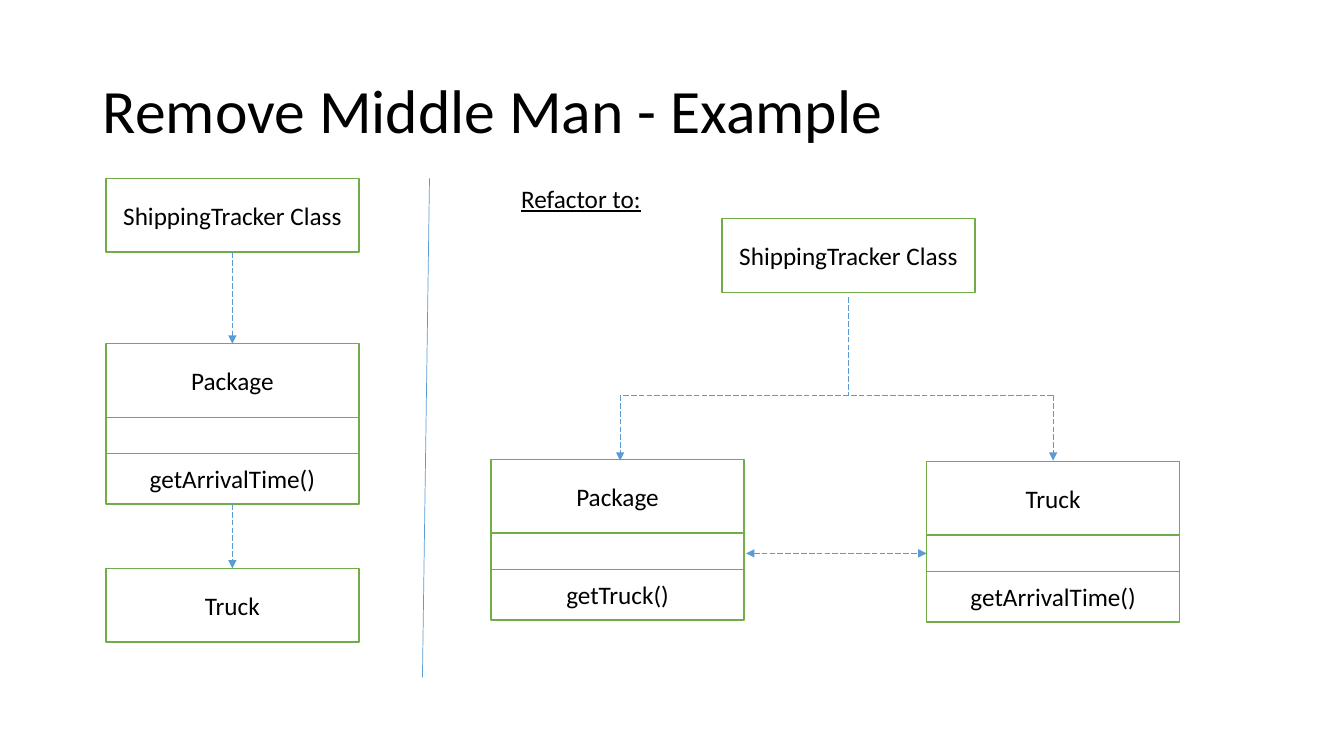
from lxml import etree
from pptx import Presentation
from pptx.dml.color import RGBColor
from pptx.enum.dml import MSO_LINE
from pptx.enum.shapes import MSO_CONNECTOR, MSO_SHAPE
from pptx.enum.text import MSO_ANCHOR, MSO_AUTO_SIZE, PP_ALIGN
from pptx.oxml.ns import qn
from pptx.util import Inches, Pt

RECT = MSO_SHAPE.RECTANGLE
STRAIGHT = MSO_CONNECTOR.STRAIGHT
LONG_DASH = MSO_LINE.LONG_DASH
MIDDLE = MSO_ANCHOR.MIDDLE
LEFT, CENTER = PP_ALIGN.LEFT, PP_ALIGN.CENTER
NO_FIT, GROW = MSO_AUTO_SIZE.NONE, MSO_AUTO_SIZE.SHAPE_TO_FIT_TEXT

BLACK, WHITE, GREEN, BLUE = "000000", "FFFFFF", "70AD47", "5B9BD5"
BOX_W, NAME_H, FIELD_H, METHOD_H = 2.51, 0.73, 0.36, 0.5
CLASS_H = NAME_H + FIELD_H + METHOD_H
TOP = 1.77


def rgb(value):
    """Turn a hex string into a colour."""
    return RGBColor.from_string(value)


def write(tf, text, align=LEFT, **extra):
    """Write one formatted paragraph and return it."""
    p = tf.paragraphs[0]
    p.alignment = align
    r = p.add_run()
    r.text = text
    for name, value in {"name": "Calibri", "size": Pt(18), **extra}.items():
        setattr(r.font, name, value)
    r.font.color.rgb = rgb(BLACK)
    return p


def add_cell(sl, x, y, h, text=""):
    """Draw one outlined compartment of a class box."""
    sp = sl.shapes.add_shape(RECT, *map(Inches, (x, y, BOX_W, h)))
    sp.shadow.inherit = False
    sp.fill.solid()
    sp.fill.fore_color.rgb = rgb(WHITE)
    sp.line.color.rgb = rgb(GREEN)
    sp.line.width = Pt(1)
    sp.text_frame.vertical_anchor = MIDDLE
    sp.text_frame.word_wrap = True
    if text:
        write(sp.text_frame, text, CENTER)


def add_class(sl, x, y, name, method=None):
    """Draw a class box, with field and method compartments if it has a method."""
    add_cell(sl, x, y, NAME_H, name)
    if method:
        add_cell(sl, x, y + NAME_H, FIELD_H)
        add_cell(sl, x, y + NAME_H + FIELD_H, METHOD_H, method)


def add_line(sl, start, end, ends=(), dashed=True):
    """Draw a thin line with triangles at the named ends."""
    cn = sl.shapes.add_connector(STRAIGHT, *map(Inches, (*start, *end)))
    cn.line.color.rgb = rgb(BLUE)
    cn.line.width = Pt(0.5)
    if dashed:
        cn.line.dash_style = LONG_DASH
    ln = cn.line._get_or_add_ln()
    for end_tag in ends:
        etree.SubElement(ln, qn(f"a:{end_tag}"), type="triangle")
    etree.SubElement(cn._element.spPr, qn("a:effectLst"))


def add_title(sl, x, y, w, h, text):
    """Place and format the title placeholder."""
    sp = sl.shapes.title
    sp.left, sp.top, sp.width, sp.height = map(Inches, (x, y, w, h))
    tf = sp.text_frame
    for name, value in {"vertical_anchor": MIDDLE, "auto_size": NO_FIT, "word_wrap": True}.items():
        setattr(tf, name, value)
    write(tf, text, size=Pt(44)).line_spacing = 0.9


def add_before(sl, x, y):
    """Draw the chain of classes that goes through the middle man."""
    mid = x + BOX_W / 2
    package, truck = y + 1.64, y + 3.87
    add_class(sl, x, y, "ShippingTracker Class")
    add_class(sl, x, package, "Package", "getArrivalTime()")
    add_class(sl, x, truck, "Truck")
    for start, end in ((y + NAME_H, package), (package + CLASS_H, truck)):
        add_line(sl, (mid, start), (mid, end), ["tailEnd"])


def add_after(sl, x, y):
    """Draw the refactored classes under their caption."""
    sp = sl.shapes.add_textbox(*map(Inches, (x + 0.2, y, 1.4, 0.4)))
    sp.text_frame.word_wrap = False
    sp.text_frame.auto_size = GROW
    write(sp.text_frame, "Refactor to:", underline=True)

    tracker_x, truck_x = x + 2.29, x + 4.32
    package_y, truck_y = y + 2.79, y + 2.81
    add_class(sl, tracker_x, y + 0.4, "ShippingTracker Class")
    add_class(sl, x, package_y, "Package", "getTruck()")
    add_class(sl, truck_x, truck_y, "Truck", "getArrivalTime()")

    link_y = truck_y + NAME_H + FIELD_H / 2
    add_line(sl, (x + BOX_W + 0.02, link_y), (truck_x, link_y), ["headEnd", "tailEnd"])
    fork_y, left, right = y + 2.15, x + 1.28, truck_x + BOX_W / 2
    for branch in (left, right):
        add_line(sl, (branch, fork_y), (branch, truck_y - 0.01), ["tailEnd"])
    add_line(sl, (right, fork_y), (left, fork_y))
    stem = tracker_x + BOX_W / 2
    add_line(sl, (stem, y + 1.18), (stem, fork_y))


def main():
    """Build and save the slide."""
    prs = Presentation()
    prs.slide_width, prs.slide_height = Inches(13.33), Inches(7.5)
    sl = prs.slides.add_slide(prs.slide_layouts[5])
    add_title(sl, 0.92, 0.4, 11.5, 1.45, "Remove Middle Man - Example")
    add_before(sl, 1.05, TOP)
    add_line(sl, (4.26, TOP), (4.19, 6.72), dashed=False)
    add_after(sl, 4.87, TOP)
    prs.save("out.pptx")


if __name__ == "__main__":
    main()
